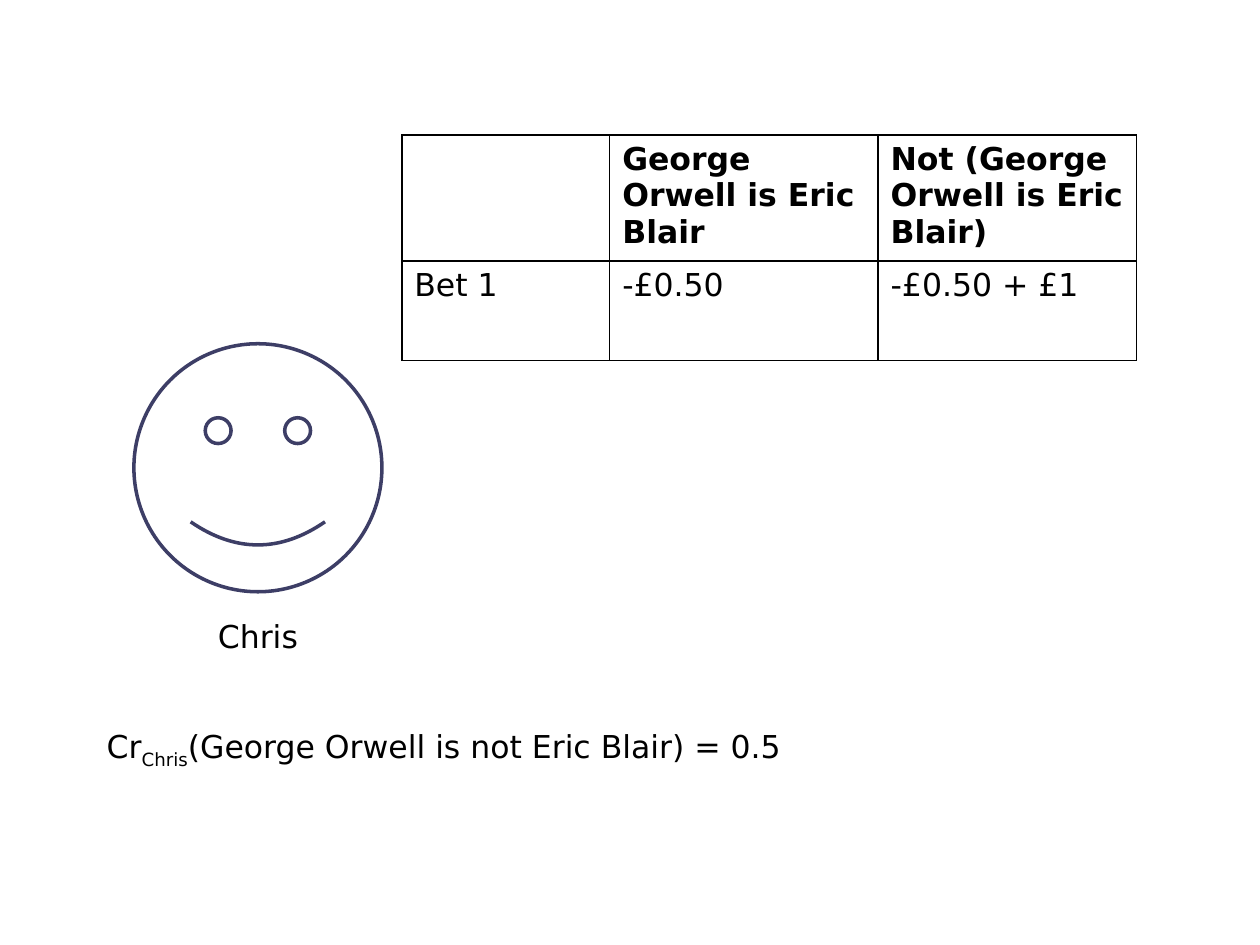
import pptx
import pptx.dml.color
import pptx.enum.shapes
import pptx.enum.text
import pptx.oxml.ns
import pptx.util
from lxml import etree
from pptx.util import Cm

BLACK = pptx.dml.color.RGBColor(0x00, 0x00, 0x00)
INDIGO = pptx.dml.color.RGBColor(0x3D, 0x3E, 0x66)
FONT = "DejaVu Sans"
PAYOFFS = [
    ["", "George Orwell is Eric Blair", "Not (George Orwell is Eric Blair)"],
    ["Bet 1", "-£0.50", "-£0.50 + £1"],
]
COLUMN_WIDTHS = [Cm(4.19), Cm(5.41), Cm(5.21)]
ROW_HEIGHT = Cm(2.01)


def style_font(paragraph, bold=False):
    paragraph.font.name = FONT
    paragraph.font.size = pptx.util.Pt(18)
    paragraph.font.color.rgb = BLACK
    paragraph.font.bold = bold


def add_smiley(slide, left, top, size):
    smiley = slide.shapes.add_shape(
        pptx.enum.shapes.MSO_SHAPE.SMILEY_FACE, left, top, size, size)
    smiley.shadow.inherit = False
    smiley.fill.background()
    smiley.line.color.rgb = INDIGO
    smiley.line.width = pptx.util.Pt(2)


def add_label(slide, left, top, width, pieces, align):
    label = slide.shapes.add_textbox(left, top, width, Cm(1.02)).text_frame
    label.word_wrap = True
    label.auto_size = pptx.enum.text.MSO_AUTO_SIZE.SHAPE_TO_FIT_TEXT
    paragraph = label.paragraphs[0]
    paragraph.alignment = align
    style_font(paragraph)
    for text, baseline in pieces:
        run = paragraph.add_run()
        run.text = text
        if baseline:
            run._r.get_or_add_rPr().set("baseline", str(baseline))


def add_borders(cell):
    properties = cell._tc.get_or_add_tcPr()
    qn = pptx.oxml.ns.qn
    for index, side in enumerate(("lnL", "lnR", "lnT", "lnB")):
        border = etree.Element(qn(f"a:{side}"), w=str(pptx.util.Pt(1)))
        fill = etree.SubElement(border, qn("a:solidFill"))
        etree.SubElement(fill, qn("a:srgbClr"), val=str(BLACK))
        properties.insert(index, border)


def add_payoff_table(slide, left, top):
    payoffs = slide.shapes.add_table(
        len(PAYOFFS), len(COLUMN_WIDTHS), left, top,
        sum(COLUMN_WIDTHS), ROW_HEIGHT * len(PAYOFFS)).table
    payoffs.first_row = False
    payoffs.horz_banding = False
    for column, width in zip(payoffs.columns, COLUMN_WIDTHS):
        column.width = width
    for row_index, texts in enumerate(PAYOFFS):
        payoffs.rows[row_index].height = ROW_HEIGHT
        for column_index, text in enumerate(texts):
            cell = payoffs.cell(row_index, column_index)
            cell.text = text
            style_font(cell.text_frame.paragraphs[0], bold=row_index == 0)
            cell.fill.background()
            add_borders(cell)


def main():
    presentation = pptx.Presentation()
    presentation.slide_width = Cm(25.4)
    presentation.slide_height = Cm(19.05)
    slide = presentation.slides.add_slide(presentation.slide_layouts[6])
    align = pptx.enum.text.PP_ALIGN

    add_smiley(slide, Cm(2.7), Cm(6.93), Cm(5))
    add_label(slide, Cm(2.1), Cm(12.32), Cm(6.2), [("Chris", 0)], align.CENTER)
    credence = [("Cr", 0), ("Chris", -25000),
                ("(George Orwell is not Eric Blair) = 0.5", 0)]
    add_label(slide, Cm(1.9), Cm(14.53), Cm(19.4), credence, align.LEFT)
    add_payoff_table(slide, Cm(8.1), Cm(2.72))

    presentation.save("out.pptx")


if __name__ == "__main__":
    main()
